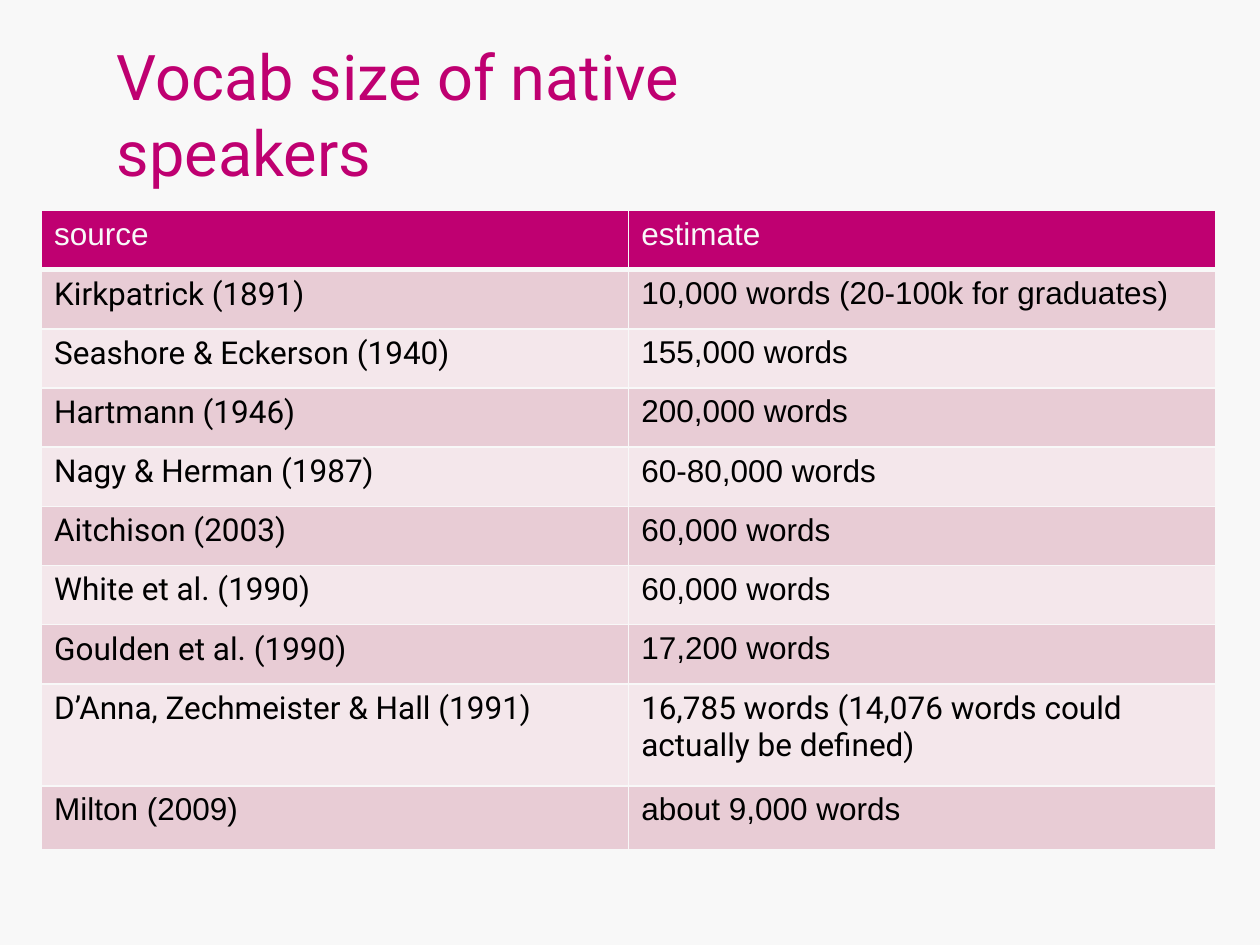
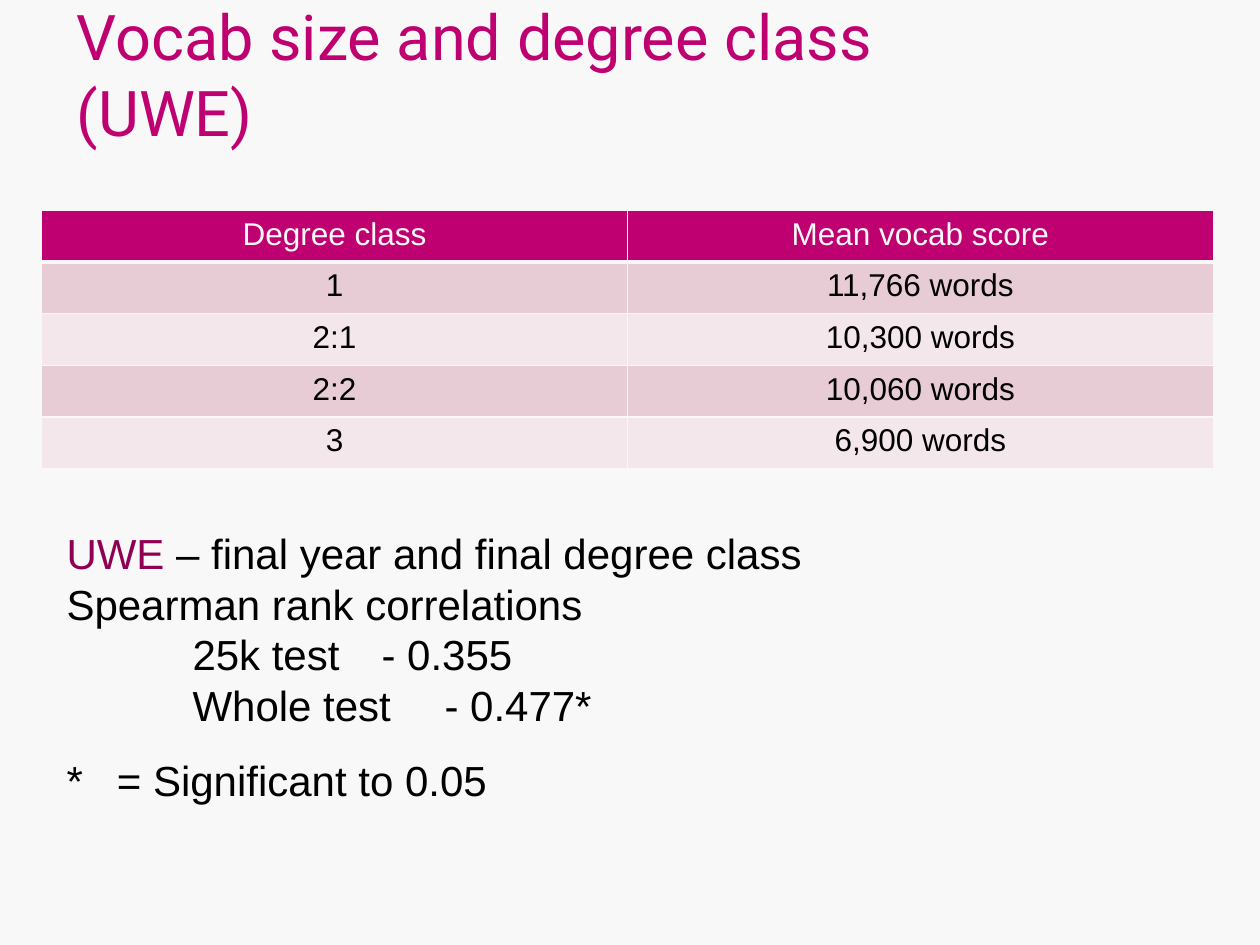
from dataclasses import dataclass
from lxml.etree import SubElement
from pptx import Presentation
from pptx.dml.color import RGBColor
from pptx.enum.text import MSO_ANCHOR, PP_ALIGN
from pptx.oxml.ns import qn
from pptx.util import Inches, Pt


@dataclass
class Theme:
    back: RGBColor = RGBColor.from_string("F8F8F8")
    pink: RGBColor = RGBColor.from_string("BF0071")
    plum: RGBColor = RGBColor.from_string("8F0055")
    ink: RGBColor = RGBColor.from_string("000000")
    bands: tuple = (RGBColor.from_string("F4E7EB"), RGBColor.from_string("E8CCD5"))
    head: str = "Roboto"
    body: str = "Arial"
    big: int = 36
    mid: int = 24
    small: int = 18
    lead: float = 1.2


theme = Theme()
deck = Presentation()
deck.slide_width, deck.slide_height = Inches(10), Inches(7.5)


def add_page(title, left, width, height):
    page = deck.slides.add_slide(deck.slide_layouts[6])
    page.background.fill.solid()
    page.background.fill.fore_color.rgb = theme.back
    frame = page.shapes.add_textbox(
        Inches(left), Inches(0.3), Inches(width), Inches(height)).text_frame
    frame.word_wrap = True
    frame.vertical_anchor = MSO_ANCHOR.BOTTOM
    para = frame.paragraphs[0]
    para.text = title
    para.line_spacing = Pt(theme.big * theme.lead)
    para.font.size, para.font.name = Pt(theme.big), theme.head
    para.font.color.rgb = theme.pink
    return page


def add_grid(page, rows, width, highs, align, heads=()):
    grid = page.shapes.add_table(
        len(rows), 2, Inches(0.33), Inches(1.67), Inches(width), Inches(sum(highs))).table
    for col in grid.columns:
        col.width = Inches(width / 2)
    for r, (row, high) in enumerate(zip(rows, highs)):
        grid.rows[r].height = Inches(high)
        for c, words in enumerate(row):
            cell = grid.cell(r, c)
            props = cell._tc.get_or_add_tcPr()
            for side in ("lnL", "lnR", "lnT", "lnB"):
                thick = 3 if r == 0 and side == "lnB" else 1
                line = SubElement(props, qn(f"a:{side}"), w=str(Pt(thick)))
                fill = SubElement(line, qn("a:solidFill"))
                SubElement(fill, qn("a:srgbClr"), val=str(theme.back))
            cell.fill.solid()
            cell.fill.fore_color.rgb = theme.bands[r % 2] if r else theme.pink
            para = cell.text_frame.paragraphs[0]
            para.text, para.alignment = words, align
            font = para.font
            font.size, font.bold = Pt(theme.small), False
            font.name = theme.head if (r, c) in heads else theme.body
            font.color.rgb = theme.ink if r else theme.back


page = add_page("Vocab size of native speakers", 0.83, 6.77, 1.25)
rows = [
    ("source", "estimate"),
    ("Kirkpatrick (1891)", "10,000 words (20-100k for graduates)"),
    ("Seashore & Eckerson (1940)", "155,000 words"),
    ("Hartmann (1946)", "200,000 words"),
    ("Nagy & Herman (1987)", "60-80,000 words"),
    ("Aitchison (2003)", "60,000 words"),
    ("White et al. (1990)", "60,000 words"),
    ("Goulden et al. (1990)", "17,200 words"),
    ("D’Anna, Zechmeister & Hall (1991)",
     "16,785 words (14,076 words could actually be defined)"),
    ("Milton (2009)", "about 9,000 words"),
]
heads = {(r, 0) for r in range(1, 9)} | {(8, 1)}
add_grid(page, rows, 9.32, [0.47] * 8 + [0.81, 0.51], PP_ALIGN.LEFT, heads)

page = add_page("Vocab size and degree class (UWE)", 0.51, 7.09, 0.93)
rows = [
    ("Degree class", "Mean vocab score"),
    ("1", "11,766 words"),
    ("2:1", "10,300 words"),
    ("2:2", "10,060 words"),
    ("3", "6,900 words"),
]
add_grid(page, rows, 9.3, [0.41] * 5, PP_ALIGN.CENTER)

frame = page.shapes.add_textbox(
    Inches(0.43), Inches(4.14), Inches(9.13), Inches(2.63)).text_frame
frame.word_wrap = True
notes = [
    (("UWE", " – final year and final degree class"), 0, 0, 0),
    (("Spearman rank correlations",), 0, 0, 0),
    (("25k test\t- 0.355",), 1, 0, 0),
    (("Whole test\t- 0.477*",), 1, 0, 0),
    (("*\t= Significant to 0.05",), 0, 0.4, 14.4),
]
for n, (parts, dent, stop, gap) in enumerate(notes):
    para = frame.add_paragraph() if n else frame.paragraphs[0]
    props = para._p.get_or_add_pPr()
    if dent:
        props.set("marL", str(Inches(dent)))
        props.set("indent", "0")
    if stop:
        tabs = SubElement(props, qn("a:tabLst"))
        SubElement(tabs, qn("a:tab"), pos=str(Inches(stop)), algn="l")
    for part in parts:
        para.add_run().text = part
    para.line_spacing = Pt(theme.mid * theme.lead)
    para.space_before = Pt(gap)
    para.font.size, para.font.name = Pt(theme.mid), theme.body
    para.font.color.rgb = theme.ink
frame.paragraphs[0].runs[0].font.color.rgb = theme.plum

deck.save("out.pptx")
